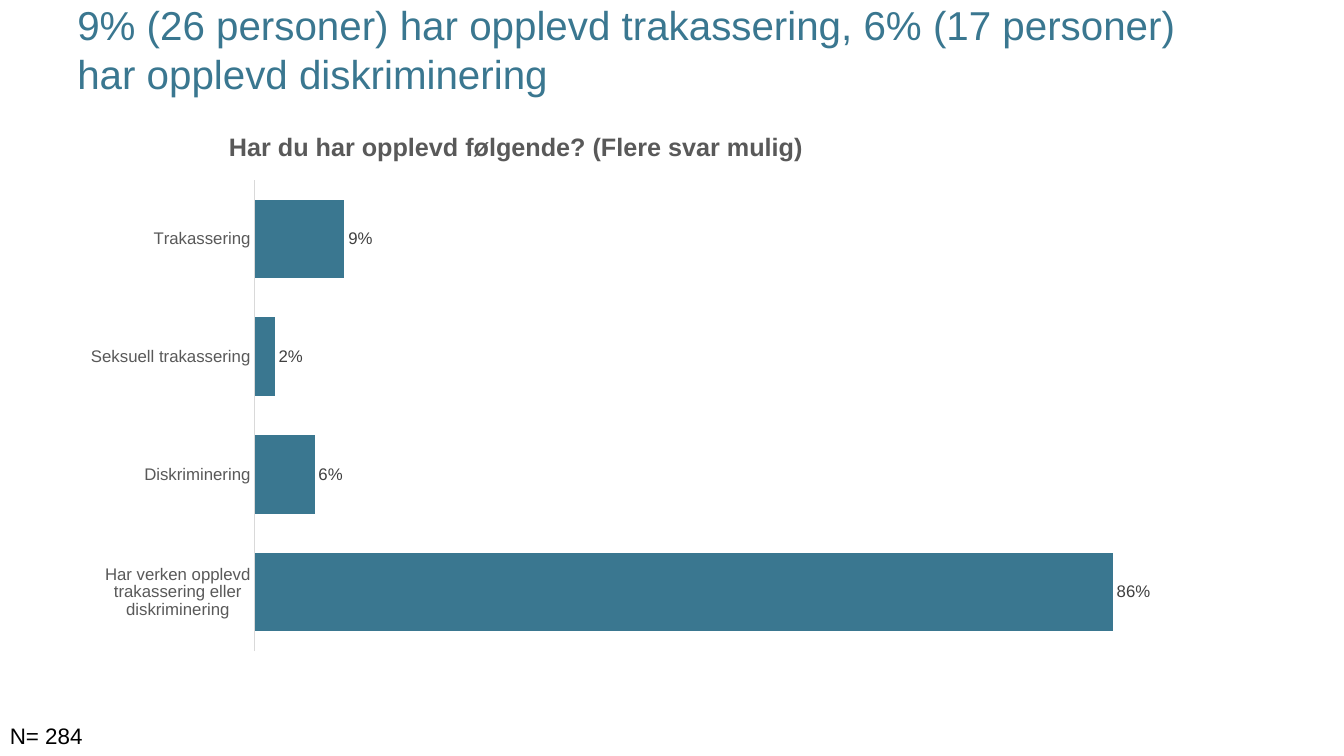
from lxml.etree import SubElement
from pptx import Presentation
from pptx.chart.data import CategoryChartData
from pptx.dml.color import RGBColor
from pptx.enum.chart import XL_CHART_TYPE, XL_LABEL_POSITION, XL_TICK_LABEL_POSITION, XL_TICK_MARK
from pptx.enum.text import MSO_ANCHOR, MSO_AUTO_SIZE, PP_ALIGN
from pptx.oxml.ns import qn
from pptx.util import Pt

FONT = "Arial"
TEAL = "3A7790"
GREY = "595959"

ANSWERS = {
    "Trakassering": 0.09,
    "Seksuell trakassering": 0.02,
    "Diskriminering": 0.06,
    "Har verken opplevd trakassering eller diskriminering": 0.86,
}


def color(hex_string):
    return RGBColor.from_string(hex_string)


def format_font(font, size, hex_string, bold=False):
    font.name = FONT
    font.size = Pt(size)
    font.bold = bold
    font.color.rgb = color(hex_string)


def set_layout(element, **settings):
    """Give a chart title or plot area a manual layout, in fractions of the chart."""
    layout = element.find(qn("c:layout"))
    if layout is None:
        layout = element.makeelement(qn("c:layout"))
        text = element.find(qn("c:tx"))
        element.insert(0 if text is None else element.index(text) + 1, layout)
    for child in list(layout):
        layout.remove(child)
    manual = SubElement(layout, qn("c:manualLayout"))
    for name, value in settings.items():
        SubElement(manual, qn(f"c:{name}")).set("val", str(value))


def add_title(slide, left, top, width, height):
    title = slide.shapes.title
    title.left, title.top, title.width, title.height = Pt(left), Pt(top), Pt(width), Pt(height)
    frame = title.text_frame
    frame.word_wrap = True
    frame.auto_size = MSO_AUTO_SIZE.NONE
    frame.vertical_anchor = MSO_ANCHOR.MIDDLE
    paragraph = frame.paragraphs[0]
    paragraph.alignment = PP_ALIGN.LEFT
    lines = ["9% (26 personer) har opplevd trakassering, 6% (17 personer)",
             "har opplevd diskriminering"]
    for index, line in enumerate(lines):
        if index:
            paragraph.add_line_break()
        run = paragraph.add_run()
        run.text = line
        format_font(run.font, 28.8, TEAL)


def add_answer_chart(slide, left, top, width, height):
    data = CategoryChartData(number_format="0%")
    data.categories = list(ANSWERS)
    data.add_series("Series 1", list(ANSWERS.values()))
    chart = slide.shapes.add_chart(XL_CHART_TYPE.BAR_CLUSTERED, Pt(left), Pt(top),
                                   Pt(width), Pt(height), data).chart
    format_font(chart.font, 10, "000000")
    chart.has_legend = False

    chart.has_title = True
    run = chart.chart_title.text_frame.paragraphs[0].add_run()
    run.text = "Har du har opplevd følgende? (Flere svar mulig)"
    format_font(run.font, 18, GREY, bold=True)
    chart.chart_title.include_in_layout = False
    set_layout(chart.chart_title._element, xMode="edge", yMode="edge", x=0.13, y=0.03)
    set_layout(chart._chartSpace.chart.plotArea, layoutTarget="inner", xMode="edge",
               yMode="edge", x=0.155, y=0.128, w=0.825, h=0.852)

    categories = chart.category_axis
    categories.reverse_order = True
    categories.major_tick_mark = XL_TICK_MARK.NONE
    categories.has_major_gridlines = False
    categories.format.line.color.rgb = color("D9D9D9")
    categories.format.line.width = Pt(0.75)
    format_font(categories.tick_labels.font, 12, GREY)

    values = chart.value_axis
    values.minimum_scale, values.maximum_scale = 0, 1
    values.has_major_gridlines = False
    values.tick_label_position = XL_TICK_LABEL_POSITION.NONE
    values.visible = False

    plot = chart.plots[0]
    plot.gap_width = 50
    plot.vary_by_categories = False
    series = plot.series[0]
    series.format.fill.solid()
    series.format.fill.fore_color.rgb = color(TEAL)
    labels = series.data_labels
    labels.show_value = True
    labels.number_format = "0%"
    labels.number_format_is_linked = False
    labels.position = XL_LABEL_POSITION.OUTSIDE_END
    format_font(labels.font, 12, "404040")


def add_sample_size(slide, left, top, width, height):
    box = slide.shapes.add_textbox(Pt(left), Pt(top), Pt(width), Pt(height))
    frame = box.text_frame
    frame.word_wrap = True
    frame.auto_size = MSO_AUTO_SIZE.SHAPE_TO_FIT_TEXT
    run = frame.paragraphs[0].add_run()
    run.text = "N= 284"
    format_font(run.font, 16, "000000")


def main():
    presentation = Presentation()
    presentation.slide_width, presentation.slide_height = Pt(960), Pt(540)
    slide = presentation.slides.add_slide(presentation.slide_layouts[5])
    add_title(slide, 48, 0.7, 864, 68.4)
    add_answer_chart(slide, 48, 78, 864, 395)
    add_sample_size(slide, 0, 512, 77, 26.6)
    presentation.save("out.pptx")


if __name__ == "__main__":
    main()
